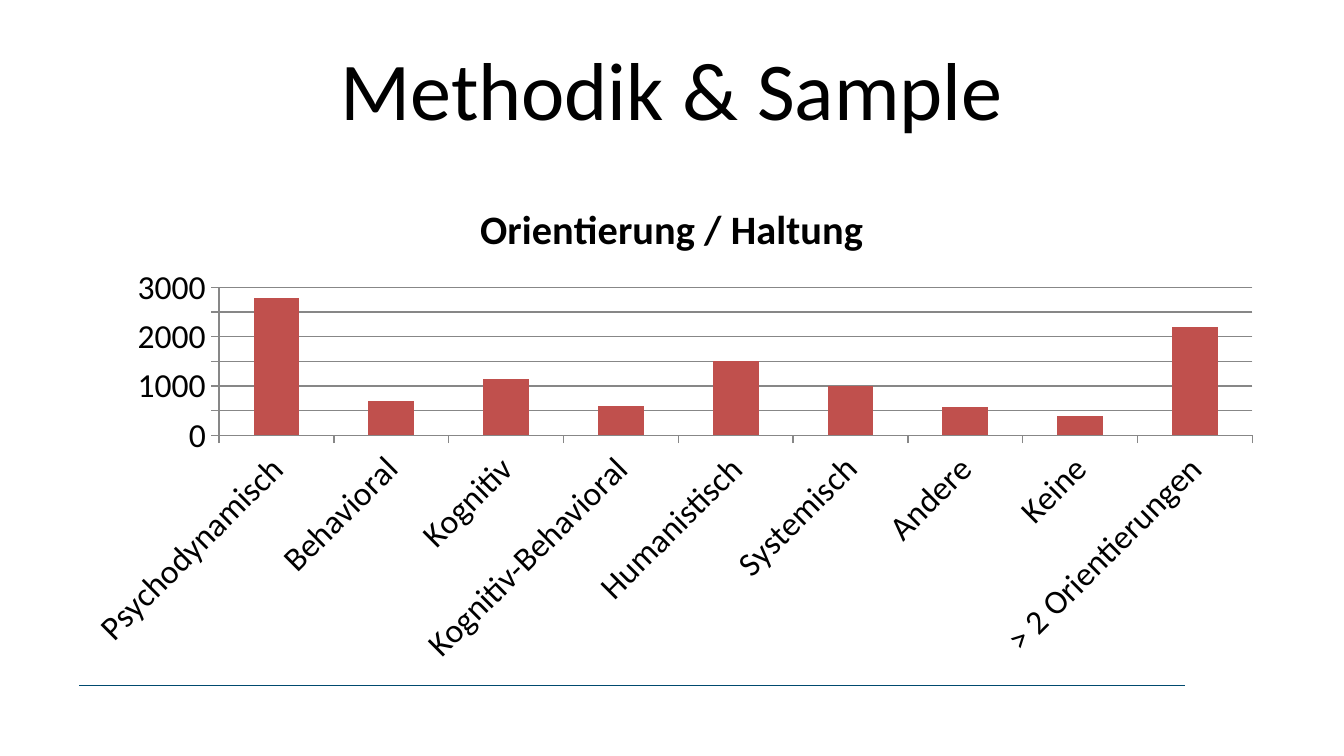
import pptx
import pptx.chart.data
import pptx.dml.color
import pptx.enum.chart
import pptx.enum.shapes
import pptx.enum.text
import pptx.oxml
import pptx.util
from pptx.dml.color import RGBColor
from pptx.util import Inches, Pt

FONT = "Calibri"
BLACK = RGBColor(0x00, 0x00, 0x00)
RED = RGBColor(0xC0, 0x50, 0x4D)
GREY = RGBColor(0x87, 0x87, 0x87)
BLUE = RGBColor(0x00, 0x4A, 0x6F)

TITLE = "Methodik & Sample"
HEADING = "Orientierung / Haltung"
COUNTS = {
    "Psychodynamisch": 2780,
    "Behavioral": 690,
    "Kognitiv": 1150,
    "Kognitiv-Behavioral": 590,
    "Humanistisch": 1510,
    "Systemisch": 1010,
    "Andere": 580,
    "Keine": 400,
    "> 2 Orientierungen": 2200,
}
WIDE, HIGH = 9, 3.71
PLOT = {"x": 1.13 / WIDE, "y": 0.83 / HIGH,
        "w": 7.69 / WIDE, "h": 1.1 / HIGH}


def style(font, size):
    font.name = FONT
    font.size = Pt(size)
    font.color.rgb = BLACK


def add_rule(slide):
    rule = slide.shapes.add_connector(
        pptx.enum.shapes.MSO_CONNECTOR.STRAIGHT,
        Inches(0.59), Inches(5.1), Inches(8.82), Inches(5.1))
    rule.line.color.rgb = BLUE
    rule.line.width = Pt(0.75)
    props = rule._element.spPr
    props.append(pptx.oxml.parse_xml(
        '<a:effectLst xmlns:a='
        '"http://schemas.openxmlformats.org/drawingml/2006/main"/>'))


def add_title(slide):
    title = slide.shapes.title
    title.left, title.top = Inches(0.5), Inches(0.23)
    title.width, title.height = Inches(9), Inches(0.94)
    frame = title.text_frame
    frame.text = TITLE
    frame.vertical_anchor = pptx.enum.text.MSO_ANCHOR.MIDDLE
    frame.margin_bottom = Inches(0.15)
    para = frame.paragraphs[0]
    para.alignment = pptx.enum.text.PP_ALIGN.CENTER
    style(para.font, 44)


def place_plot(chart):
    """Fix the inner plot area as shares of the chart."""
    area = chart._chartSpace.chart.plotArea
    for old in area.xpath("c:layout"):
        area.remove(old)
    sizes = "".join(f'<c:{key} val="{val:.4f}"/>'
                    for key, val in PLOT.items())
    area.insert(0, pptx.oxml.parse_xml(
        '<c:layout xmlns:c='
        '"http://schemas.openxmlformats.org/drawingml/2006/chart">'
        '<c:manualLayout><c:layoutTarget val="inner"/>'
        '<c:xMode val="edge"/><c:yMode val="edge"/>'
        f'{sizes}</c:manualLayout></c:layout>'))


def add_bars(slide):
    data = pptx.chart.data.CategoryChartData()
    data.categories = list(COUNTS)
    data.add_series("Series 1", list(COUNTS.values()))
    chart = slide.shapes.add_chart(
        pptx.enum.chart.XL_CHART_TYPE.COLUMN_CLUSTERED,
        Inches(0.5), Inches(1.31), Inches(WIDE), Inches(HIGH), data).chart
    style(chart.font, 18)
    chart.has_legend = False
    chart.has_title = True
    frame = chart.chart_title.text_frame
    frame.text = HEADING
    font = frame.paragraphs[0].font
    style(font, 21.6)
    font.bold = True
    chart.chart_title.include_in_layout = False
    place_plot(chart)

    plot = chart.plots[0]
    plot.gap_width = 150
    plot.vary_by_categories = False
    fill = plot.series[0].format.fill
    fill.solid()
    fill.fore_color.rgb = RED

    names, scale = chart.category_axis, chart.value_axis
    style(names.tick_labels.font, 18)
    names._element.txPr.bodyPr.set("rot", str(-45 * 60000))
    scale.minimum_scale, scale.maximum_scale = 0, 3000
    scale.major_unit = 500
    scale.has_major_gridlines = True
    for axis in (names, scale):
        axis.major_tick_mark = pptx.enum.chart.XL_TICK_MARK.OUTSIDE
    for part in (names, scale, scale.major_gridlines):
        part.format.line.color.rgb = GREY
        part.format.line.width = Pt(0.75)


deck = pptx.Presentation()
deck.slide_width, deck.slide_height = Inches(10), Inches(10 * 9 / 16)
slide = deck.slides.add_slide(deck.slide_layouts[5])
add_rule(slide)
add_title(slide)
add_bars(slide)
deck.save("out.pptx")
